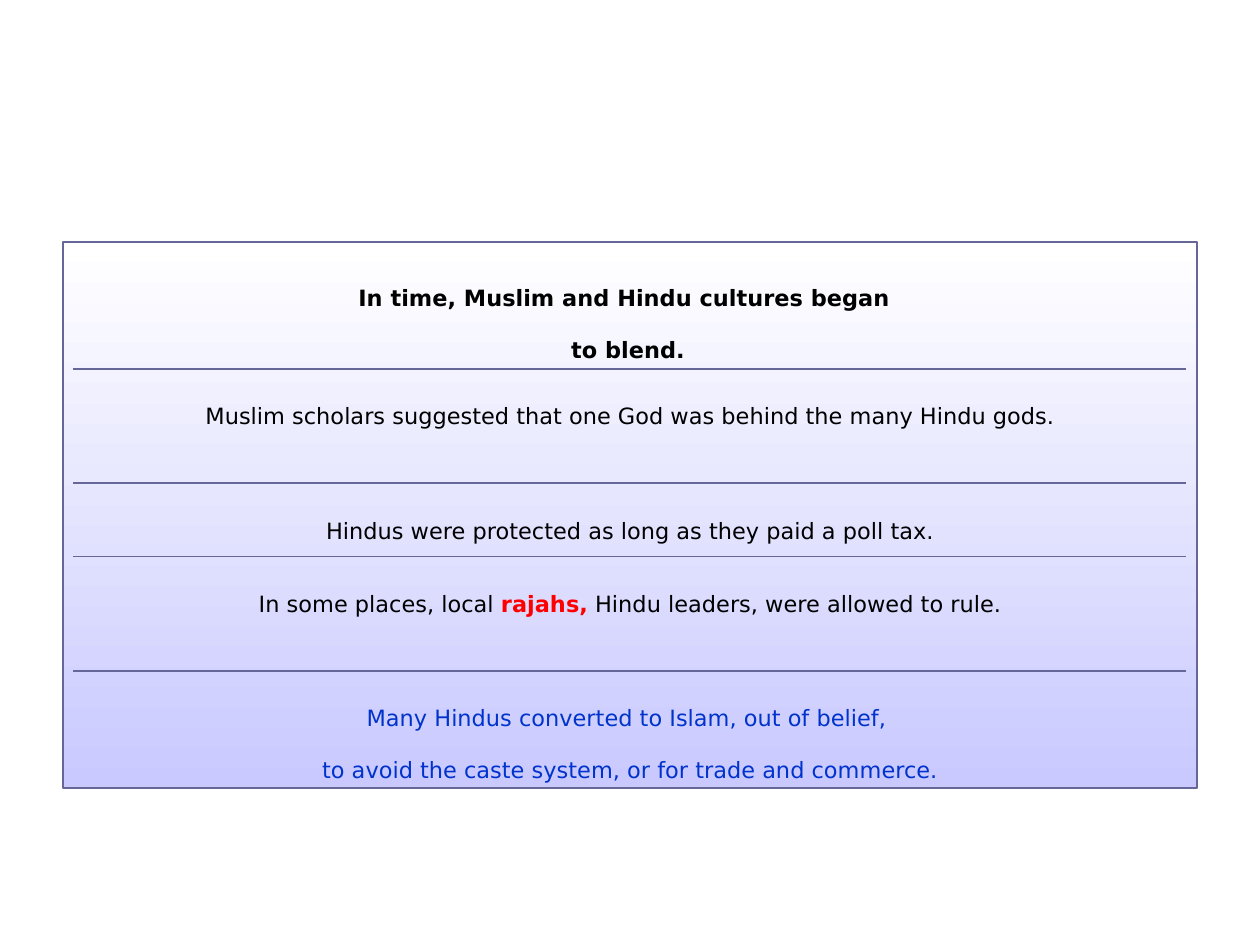
from lxml.etree import SubElement
from pptx import Presentation
from pptx.dml.color import RGBColor
from pptx.enum.shapes import MSO_SHAPE
from pptx.enum.text import PP_ALIGN
from pptx.oxml.ns import qn
from pptx.util import Emu, Pt

PX = 914400 // 126
FONT = "DejaVu Sans"
BLACK, RED, BLUE, SLATE = "000000", "FF0000", "0033CC", "666699"


def px(length):
    return Emu(length * PX)


def color(hex_code):
    return RGBColor.from_string(hex_code)


def add_text(slide, box, runs, size=12.8, fill=BLACK, bold=False):
    """Place centred text; runs is a string or a list of (text, format) pairs."""
    frame = slide.shapes.add_textbox(*map(px, box)).text_frame
    frame.word_wrap = True
    frame.margin_top = px(7)
    paragraph = frame.paragraphs[0]
    paragraph.alignment = PP_ALIGN.CENTER
    paragraph.line_spacing = Pt(29.7)
    if isinstance(runs, str):
        runs = [(runs, {})]
    for text, style in runs:
        for number, line in enumerate(text.split("\n")):
            if number:
                paragraph.add_line_break()
            run = paragraph.add_run()
            run.text = line
            run.font.name = FONT
            run.font.size = Pt(size)
            run.font.bold = style.get("bold", bold)
            run.font.color.rgb = color(style.get("fill", fill))


def add_panel(slide, box):
    panel = slide.shapes.add_shape(MSO_SHAPE.RECTANGLE, *map(px, box))
    panel.shadow.inherit = False
    panel.fill.gradient()
    panel.fill.gradient_angle = 270
    for stop, position, shade in zip(panel.fill.gradient_stops, (0, 1), ("FFFFFF", "C9C9FF")):
        stop.position = position
        stop.color.rgb = color(shade)
    panel.line.color.rgb = color(SLATE)
    panel.line.width = Pt(1.5)


def set_border(cell, side, width):
    border = SubElement(cell._tc.get_or_add_tcPr(), qn(f"a:ln{side}"), w=str(Pt(width)))
    if width:
        fill = SubElement(border, qn("a:solidFill"))
        SubElement(fill, qn("a:srgbClr"), val=SLATE)
    else:
        SubElement(border, qn("a:noFill"))


def add_divider_table(slide, box, heights, rules):
    """Empty one-column table whose inner borders divide the statements."""
    table = slide.shapes.add_table(len(heights), 1, *map(px, box)).table
    table.first_row = table.horz_banding = False
    edges = [0, *rules, 0]
    for index, height in enumerate(heights):
        table.rows[index].height = px(height)
        cell = table.cell(index, 0)
        cell.margin_top = cell.margin_bottom = 0
        for side, width in zip("LRTB", (0, 0, edges[index], edges[index + 1])):
            set_border(cell, side, width)
        cell.fill.background()


def add_blending_slide(deck):
    slide = deck.slides.add_slide(deck.slide_layouts[6])
    left, width = 63, 1134
    add_panel(slide, (left, 242, width, 546))

    # Heading
    add_text(slide, (left + 14, 252, 1102, 106),
             "In time, Muslim and Hindu cultures began \nto blend.", bold=True)

    # Dividers
    add_divider_table(slide, (left + 10, 316, 1113, 418),
                      heights=(53, 114, 73, 115, 63), rules=(1, 1, 0.5, 1))

    # Statements
    statements = [
        (370, 106, "Muslim scholars suggested that one God was behind the many Hindu gods.", BLACK),
        (485, 59, "Hindus were protected as long as they paid a poll tax.", BLACK),
        (558, 106, [("In some places, local ", {}),
                    ("rajahs,", {"fill": RED, "bold": True}),
                    (" Hindu leaders, were allowed to rule.", {})], BLACK),
        (672, 106, "Many Hindus converted to Islam, out of belief, \n"
                   "to avoid the caste system, or for trade and commerce.", BLUE),
    ]
    for top, height, runs, fill in statements:
        add_text(slide, (left, top, width, height), runs, fill=fill)


def main():
    deck = Presentation()
    deck.slide_width, deck.slide_height = px(1260), px(945)
    add_blending_slide(deck)
    deck.save("out.pptx")


if __name__ == "__main__":
    main()
